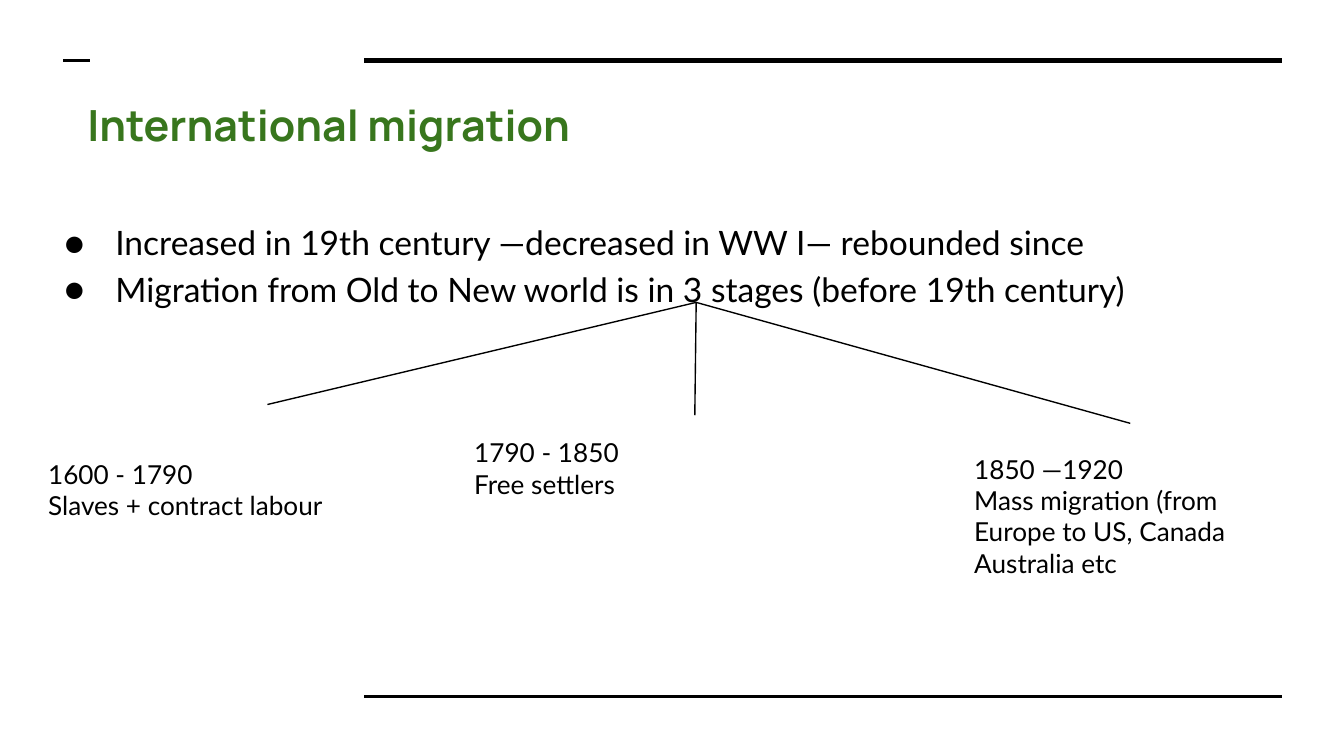
from lxml.etree import SubElement
from pptx import Presentation
from pptx.dml.color import RGBColor
from pptx.enum.shapes import MSO_CONNECTOR as Connector
from pptx.enum.text import MSO_ANCHOR as Anchor, MSO_AUTO_SIZE as AutoSize, PP_ALIGN as Align
from pptx.oxml.ns import qn
from pptx.util import Inches, Pt

BLACK, GREEN = "000000", "38761D"
TITLE_FORMAT = {"name": "Manrope", "size": Pt(23), "bold": True}
BODY_FORMAT = {"name": "Lato", "size": Pt(18), "bold": False}
STAGE_FORMAT = {"name": "Lato", "size": Pt(14), "bold": False}
POINTS = [
    "Increased in 19th century —decreased in WW I— rebounded since",
    "Migration from Old to New world is in 3 stages (before 19th century)",
]
STAGES = [
    ((0.26, 3.31, 2.46, 0.67), (1.99, 3.01), ["1600 - 1790", "Slaves + contract labour"]),
    ((3.43, 3.15, 2.52, 0.67), (5.17, 3.09), ["1790 - 1850", "Free settlers"]),
    ((7.15, 3.27, 2.38, 1.13), (8.41, 3.15),
     ["1850 —1920", "Mass migration (from Europe to US, Canada Australia etc"]),
]


def color(value):
    """Turn a hex string into a colour."""
    return RGBColor.from_string(value)


def add_line(page, start, end, width):
    """Draw a plain black line between two points."""
    line = page.shapes.add_connector(
        Connector.STRAIGHT, *[Inches(value) for value in (*start, *end)])
    line.line.color.rgb = color(BLACK)
    line.line.width = Pt(width)
    SubElement(line._element.spPr, qn("a:effectLst"))


def place(shape, box):
    """Move a shape to a box of left, top, width and height."""
    for name, value in zip(("left", "top", "width", "height"), box):
        setattr(shape, name, Inches(value))


def write(shape, lines, font_format, hex_color):
    """Fill a shape with one formatted paragraph per line."""
    frame = shape.text_frame
    frame_format = {"word_wrap": True, "auto_size": AutoSize.NONE, "vertical_anchor": Anchor.TOP}
    for side in ("left", "top", "right", "bottom"):
        frame_format[f"margin_{side}"] = Inches(0.1)
    for name, value in frame_format.items():
        setattr(frame, name, value)
    frame.text = "\n".join(lines)
    for para in frame.paragraphs:
        para.alignment = Align.LEFT
        para.space_before = para.space_after = Pt(0)
        para.line_spacing = 1.0
        for span in para.runs:
            for name, value in font_format.items():
                setattr(span.font, name, value)
            span.font.color.rgb = color(hex_color)
    return frame


def add_bullet(para):
    """Give a paragraph a round black bullet with a hanging indent."""
    para.line_spacing = 1.15
    properties = para._p.get_or_add_pPr()
    properties.set("marL", str(Inches(0.5)))
    properties.set("indent", str(Inches(-0.38)))
    bullet_color = SubElement(properties, qn("a:buClr"))
    SubElement(bullet_color, qn("a:srgbClr"), val=BLACK)
    SubElement(properties, qn("a:buSzPts"), val="1800")
    SubElement(properties, qn("a:buFont"), typeface="Lato")
    SubElement(properties, qn("a:buChar"), char="●")


def add_rules(page, left, right, top, bottom):
    """Frame the page with a thick top rule, a thin bottom rule and a dash."""
    add_line(page, (left, top), (right, top), 3)
    add_line(page, (left, bottom), (right, bottom), 1.5)
    add_line(page, (0.47, top), (0.67, top), 1.5)


def add_title(page, box):
    """Place and format the title."""
    title = page.shapes.title
    place(title, box)
    write(title, ["International migration"], TITLE_FORMAT, GREEN)


def add_points(page, box):
    """Write the bulleted statements."""
    body = page.shapes.add_textbox(*[Inches(value) for value in box])
    for para in write(body, POINTS, BODY_FORMAT, BLACK).paragraphs:
        add_bullet(para)


def add_stages(page, root):
    """Branch from the root point to the three migration stages."""
    for box, tip, lines in STAGES:
        add_line(page, root, tip, 0.75)
        label = page.shapes.add_textbox(*[Inches(value) for value in box])
        write(label, lines, STAGE_FORMAT, BLACK).auto_size = AutoSize.SHAPE_TO_FIT_TEXT


def main():
    """Build and save the deck."""
    deck = Presentation()
    deck.slide_width = Inches(10)
    deck.slide_height = deck.slide_width * 9 // 16
    page = deck.slides.add_slide(deck.slide_layouts[5])
    page.background.fill.solid()
    page.background.fill.fore_color.rgb = color("FFFFFF")
    add_rules(page, 2.71, 9.54, 0.45, 5.18)
    add_title(page, (0.55, 0.63, 8.99, 0.69))
    add_points(page, (0.26, 1.51, 8.99, 4.04))
    add_stages(page, (5.18, 2.25))
    deck.save("out.pptx")


if __name__ == "__main__":
    main()
